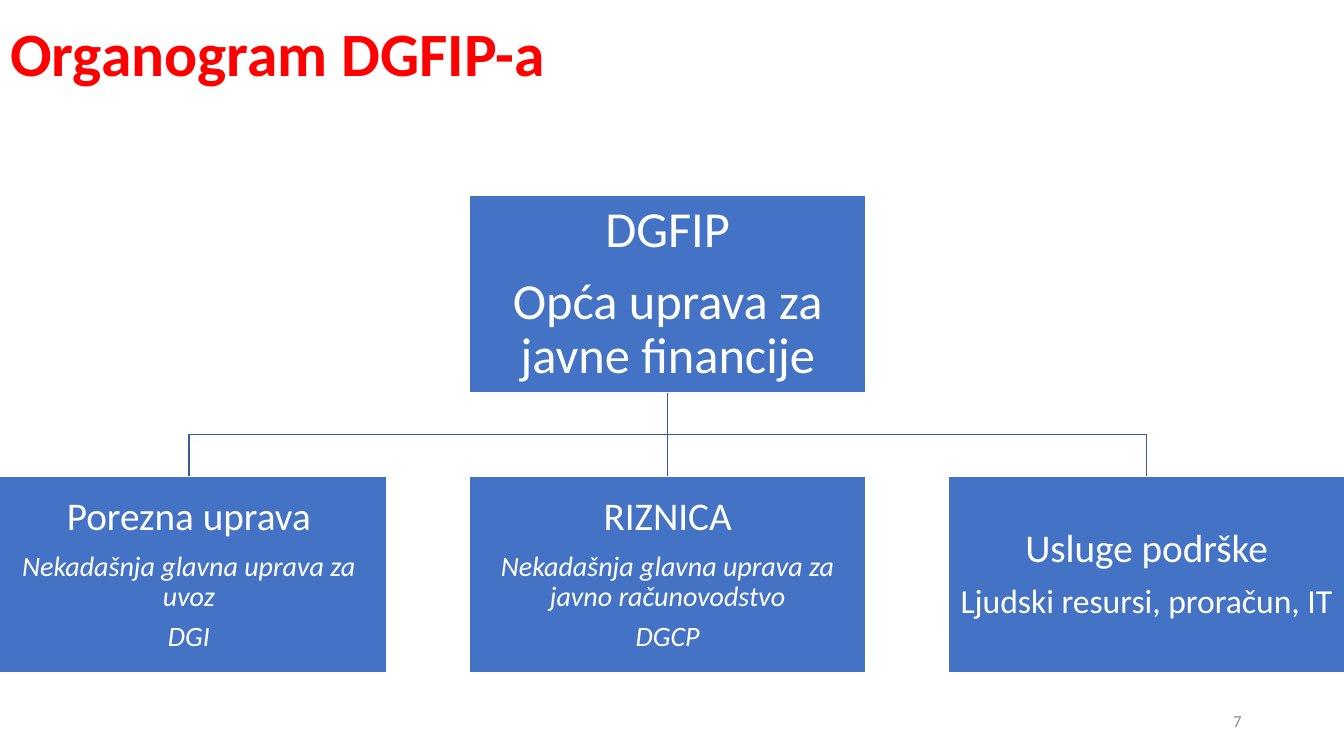
from lxml import etree
from pptx import Presentation
from pptx.dml.color import RGBColor
from pptx.enum import shapes, text
from pptx.oxml import ns
from pptx.util import Pt

COLORS = {
    "title": "FF0000",
    "box": "4472C4",
    "white": "FFFFFF",
    "line": "365B9D",
    "number": "8C8C8C",
}
FONT = "Calibri"
BOX_WIDTH, BOX_HEIGHT, BOX_INSET = 282.8, 141, 2.5
COLUMN_STEP, ROW_STEP = 342, 200.2
HEAD = [("DGFIP", 36, False), ("Opća uprava za javne financije", 36, False)]
UNITS = [
    [("Porezna uprava", 28, False),
     ("Nekadašnja glavna uprava za uvoz", 20, True),
     ("DGI", 20, True)],
    [("RIZNICA", 28, False),
     ("Nekadašnja glavna uprava za javno računovodstvo", 20, True),
     ("DGCP", 20, True)],
    [("Usluge podrške", 28, False),
     ("Ljudski resursi, proračun, IT", 24, False)],
]


def color(name):
    return RGBColor.from_string(COLORS[name])


def write(para, words, size, tint, align, bold=False, italic=False,
          spacing=0.9, after=0):
    para.alignment = align
    para.line_spacing = spacing
    para.space_before = Pt(0)
    para.space_after = Pt(after)
    span = para.add_run()
    span.text = words
    span.font.name = FONT
    span.font.size = Pt(size)
    span.font.bold = bold
    span.font.italic = italic
    span.font.color.rgb = color(tint)


def set_frame(frame, inset=None):
    frame.word_wrap = True
    frame.auto_size = text.MSO_AUTO_SIZE.NONE
    frame.vertical_anchor = text.MSO_ANCHOR.MIDDLE
    if inset is not None:
        frame.margin_left = frame.margin_right = Pt(inset)
        frame.margin_top = frame.margin_bottom = Pt(inset)


def add_title(page, left, top, width, height):
    title = page.shapes.title
    title.left, title.top = Pt(left), Pt(top)
    title.width, title.height = Pt(width), Pt(height)
    set_frame(title.text_frame)
    write(title.text_frame.paragraphs[0], "Organogram DGFIP-a", 44, "title",
          text.PP_ALIGN.LEFT, bold=True)


def add_unit(page, left, top, lines):
    box = page.shapes.add_shape(
        shapes.MSO_SHAPE.RECTANGLE, Pt(left), Pt(top),
        Pt(BOX_WIDTH), Pt(BOX_HEIGHT))
    box.shadow.inherit = False
    box.fill.solid()
    box.fill.fore_color.rgb = color("box")
    box.line.color.rgb = color("white")
    box.line.width = Pt(1)
    frame = box.text_frame
    set_frame(frame, BOX_INSET)
    for index, (words, size, italic) in enumerate(lines):
        para = frame.add_paragraph() if index else frame.paragraphs[0]
        write(para, words, size, "white", text.PP_ALIGN.CENTER,
              italic=italic, after=round(size * 0.35, 1))
    return box


def style_line(line):
    line.color.rgb = color("line")
    line.width = Pt(1)


def add_stem(page, parent, child):
    stem = page.shapes.add_connector(
        shapes.MSO_CONNECTOR.STRAIGHT, 0, 0, 0, 0)
    stem.begin_connect(parent, 2)
    stem.end_connect(child, 0)
    style_line(stem.line)
    etree.SubElement(stem._element.spPr, ns.qn("a:effectLst"))


def add_branch(page, parent, child):
    start_x = parent.left + parent.width // 2
    start_y = parent.top + parent.height
    end_x = child.left + child.width // 2
    middle_y = (start_y + child.top) // 2
    builder = page.shapes.build_freeform(start_x, start_y)
    builder.add_line_segments(
        [(start_x, middle_y), (end_x, middle_y), (end_x, child.top)],
        close=False)
    branch = builder.convert_to_shape()
    branch.shadow.inherit = False
    branch.fill.background()
    style_line(branch.line)


def add_chart_tree(page, left, top):
    head = add_unit(page, left + COLUMN_STEP, top, HEAD)
    first, middle, last = [
        add_unit(page, left + column * COLUMN_STEP, top + ROW_STEP, lines)
        for column, lines in enumerate(UNITS)]
    add_branch(page, head, last)
    add_stem(page, head, middle)
    add_branch(page, head, first)


def add_page_number(page, left, top, width, height):
    box = page.shapes.add_textbox(Pt(left), Pt(top), Pt(width), Pt(height))
    set_frame(box.text_frame)
    write(box.text_frame.paragraphs[0], "7", 12, "number",
          text.PP_ALIGN.RIGHT, spacing=1.0)


def main():
    deck = Presentation()
    deck.slide_width, deck.slide_height = Pt(960), Pt(540)
    page = deck.slides.add_slide(deck.slide_layouts[5])
    add_title(page, 0, 0, 894, 80.6)
    add_chart_tree(page, -6.5, 139.7)
    add_page_number(page, 678, 500.5, 216, 28.8)
    deck.save("out.pptx")


if __name__ == "__main__":
    main()
